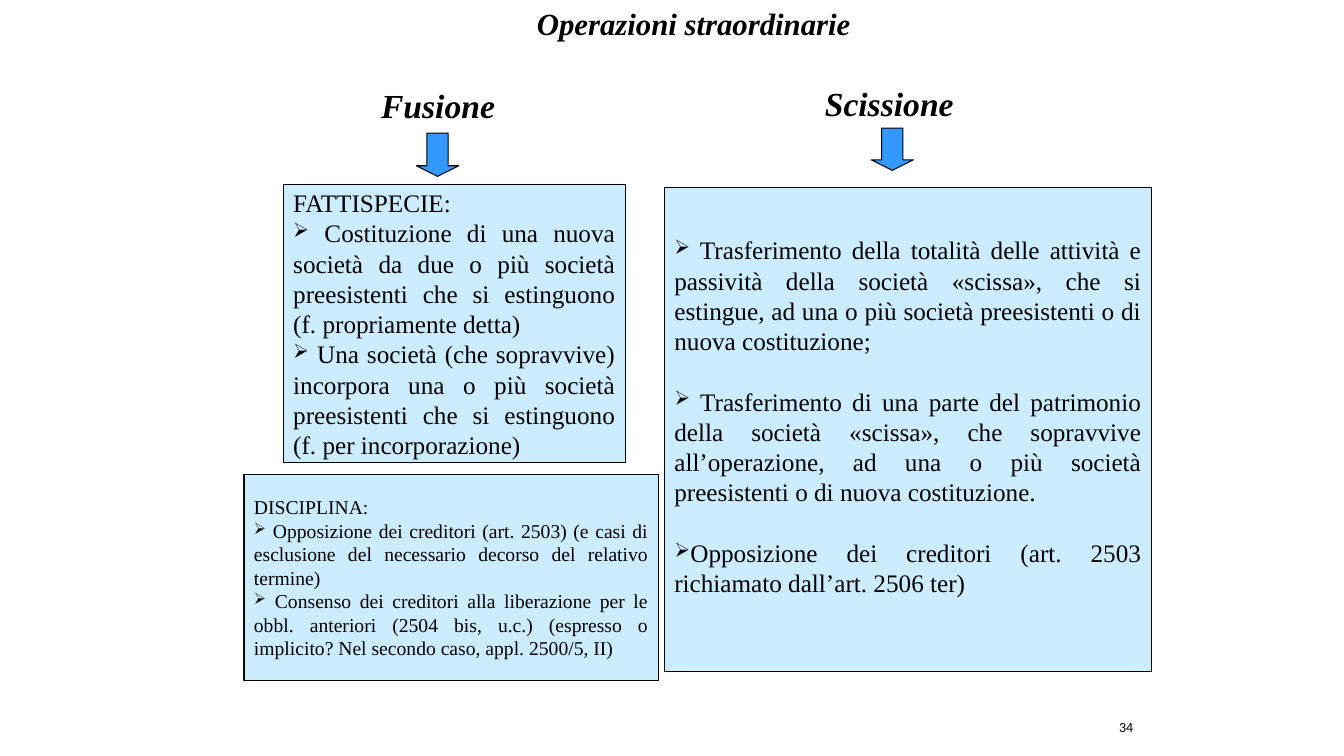
from lxml import etree
from pptx import Presentation
from pptx.dml.color import RGBColor
from pptx.enum.shapes import MSO_SHAPE
from pptx.enum.text import MSO_ANCHOR, PP_ALIGN
from pptx.oxml.ns import qn
from pptx.util import Inches, Pt

RECT, DOWN_ARROW = MSO_SHAPE.RECTANGLE, MSO_SHAPE.DOWN_ARROW
CENTER, JUSTIFY = PP_ALIGN.CENTER, PP_ALIGN.JUSTIFY
TOP, MIDDLE = MSO_ANCHOR.TOP, MSO_ANCHOR.MIDDLE

COLUMNS, ROWS = 1333, 750  # grid of the whole slide
CELL = Inches(0.01)
BLACK, PALE_BLUE, BLUE = "000000", "CCECFF", "3399FF"
SERIF, SANS = "Times New Roman", "Calibri"
BULLET = "➢"

FUSION_CASES = [
    "FATTISPECIE:",
    BULLET + " Costituzione di una nuova società da due o più società "
    "preesistenti che si estinguono (f. propriamente detta)",
    BULLET + " Una società (che sopravvive) incorpora una o più società "
    "preesistenti che si estinguono (f. per incorporazione)",
]
FUSION_RULES = [
    "DISCIPLINA:",
    BULLET + " Opposizione dei creditori (art. 2503) (e casi di esclusione del "
    "necessario decorso del relativo termine)",
    BULLET + " Consenso dei creditori alla liberazione per le obbl. anteriori "
    "(2504 bis, u.c.) (espresso o implicito? Nel secondo caso, appl. 2500/5, II)",
]
DEMERGER_CASES = [
    BULLET + " Trasferimento della totalità delle attività e passività della "
    "società «scissa», che si estingue, ad una o più società preesistenti o di "
    "nuova costituzione;",
    BULLET + " Trasferimento di una parte del patrimonio della società «scissa», "
    "che sopravvive all’operazione, ad una o più società preesistenti o di "
    "nuova costituzione.",
    BULLET + "Opposizione dei creditori (art. 2503 richiamato dall’art. 2506 ter)",
]


def color(value):
    return RGBColor.from_string(value)


def cells(box):
    return [round(length * CELL) for length in box]


def inside(region, box):
    """Turn a box measured from the region's corner into a slide box."""
    return region[0] + box[0], region[1] + box[1], box[2], box[3]


def add_bullet(para):
    properties = para._p.get_or_add_pPr()
    properties.set("marL", "0")
    properties.set("indent", "0")
    etree.SubElement(properties, qn("a:buSzPct")).set("val", "80000")
    etree.SubElement(properties, qn("a:buChar")).set("char", BULLET)


def write(shape, lines, size, font=SERIF, bold=False, italic=False, align=CENTER,
          anchor=TOP, wrap=True, gap=0, bottom=0.05):
    frame = shape.text_frame
    frame.word_wrap = wrap
    frame.vertical_anchor = anchor
    frame.margin_left = frame.margin_right = Inches(0.1)
    frame.margin_top, frame.margin_bottom = Inches(0.05), Inches(bottom)
    for index, line in enumerate(lines):
        para = frame.paragraphs[0] if index == 0 else frame.add_paragraph()
        para.alignment = align
        para.space_before = Pt(gap if index else 0)
        if line.startswith(BULLET):
            add_bullet(para)
        span = para.add_run()
        span.text = line.removeprefix(BULLET)
        span.font.name, span.font.size = font, Pt(size)
        span.font.bold, span.font.italic = bold, italic
        span.font.color.rgb = color(BLACK)


def add_block(page, kind, box, fill):
    shape = page.shapes.add_shape(kind, *cells(box))
    shape.shadow.inherit = False
    shape.fill.solid()
    shape.fill.fore_color.rgb = color(fill)
    shape.line.color.rgb = color(BLACK)
    shape.line.width = Pt(0.75)
    return shape


def draw_title(page, box):
    title = page.shapes.title
    title.left, title.top, title.width, title.height = cells(box)
    write(title, ["Operazioni straordinarie"], 22, bold=True, italic=True, wrap=False)


def draw_operation(page, region, heading, heading_box, arrow_box, panels):
    """Draw a heading, the arrow below it and the text panels it leads to."""
    label = page.shapes.add_textbox(*cells(inside(region, heading_box)))
    write(label, [heading], 24, bold=True, italic=True, wrap=False)
    arrow = add_block(page, DOWN_ARROW, inside(region, arrow_box), BLUE)
    arrow.adjustments[0], arrow.adjustments[1] = 0.5, 0.25
    for box, lines, size, spacing in panels:
        panel = add_block(page, RECT, inside(region, box), PALE_BLUE)
        write(panel, lines, size, align=JUSTIFY, anchor=MIDDLE, **spacing)


def draw_page_number(page, box):
    write(page.shapes.add_textbox(*cells(box)), ["34"], 10, font=SANS)


def main():
    deck = Presentation()
    deck.slide_width, deck.slide_height = cells((COLUMNS, ROWS))
    page = deck.slides.add_slide(deck.slide_layouts[5])
    draw_title(page, (521, 0, 334, 47))
    draw_operation(
        page, (242, 79, 411, 596), "Fusione", (126, 0, 133, 50), (171, 53, 42, 43),
        [((39, 104, 339, 276), FUSION_CASES, 18, {}),
         ((0, 392, 411, 204), FUSION_RULES, 14, {})])
    draw_operation(
        page, (659, 77, 483, 589), "Scissione", (149, 0, 148, 50), (205, 50, 42, 42),
        [((0, 109, 483, 480), DEMERGER_CASES, 18, {"gap": 21.6, "bottom": 0.31})])
    draw_page_number(page, (1092, 708, 50, 27))
    deck.save("out.pptx")


if __name__ == "__main__":
    main()
